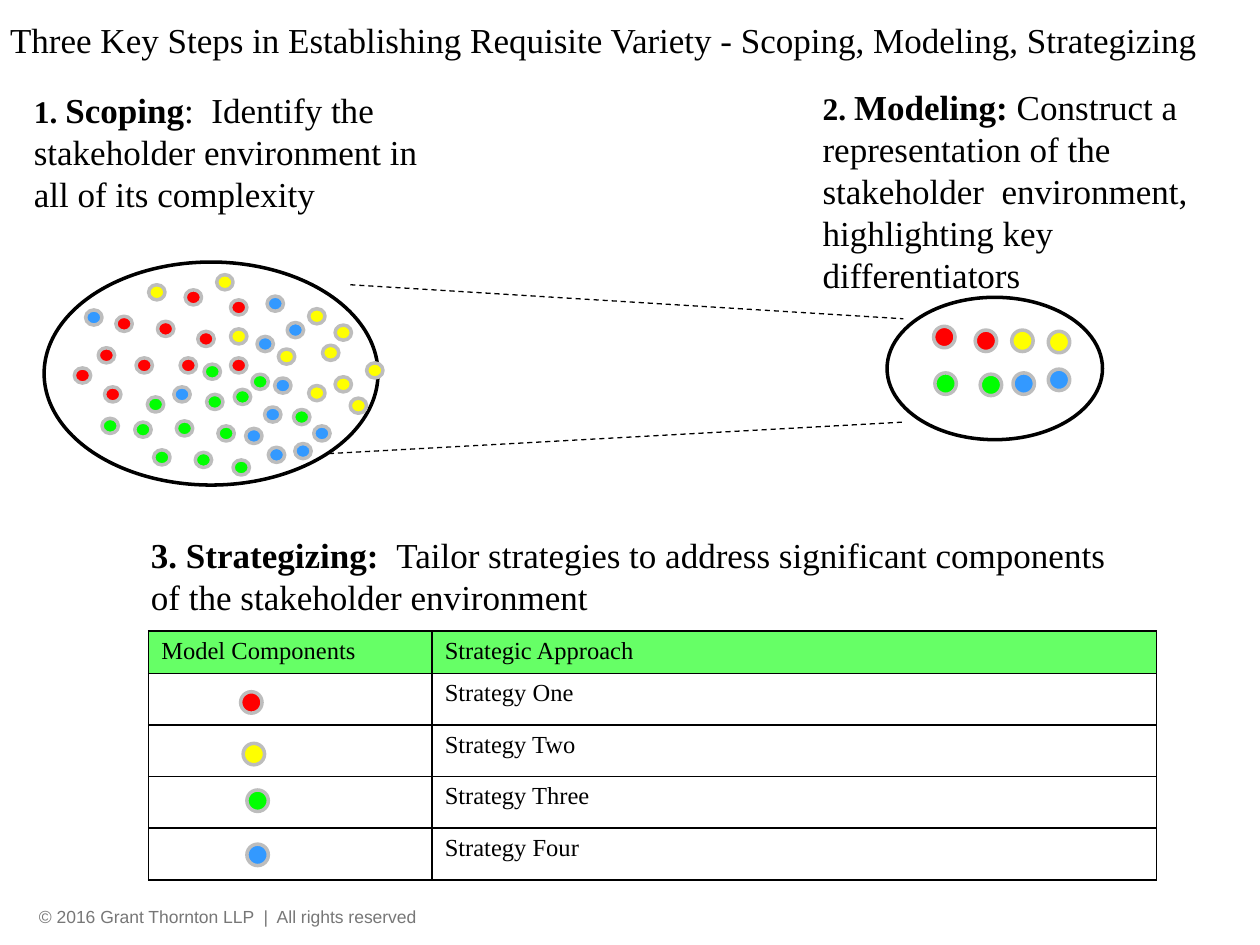
import pptx
import pptx.util
import pptx.dml.color
import pptx.enum.dml
import pptx.enum.shapes
import pptx.enum.text
import pptx.oxml
import pptx.oxml.ns
from pptx.util import Inches

COLORS = {
    "black": "000000", "white": "FFFFFF", "gray": "777777", "ring": "BDBDBD",
    "header": "66FF66", "red": "FF0000", "yellow": "FFFF00",
    "green": "00FF00", "blue": "3399FF",
}
SERIF = "Times New Roman"

# Left and top of each dot, by stakeholder group
SCOPE_DOTS = {
    "red": [(1.83, 2.38), (1.57, 2.63), (0.83, 3.07), (1.47, 2.3), (0.78, 2.76),
            (1.43, 2.84), (1.08, 2.84), (0.92, 2.51), (1.25, 2.55), (1.83, 2.84),
            (0.59, 2.92)],
    "green": [(1.85, 3.65), (1.62, 2.89), (1.07, 3.35), (1.73, 3.38), (1.55, 3.59),
              (1.17, 3.15), (1.64, 3.13), (1.22, 3.57), (0.81, 3.32), (1.4, 3.34),
              (1.86, 3.09), (2, 2.97), (2.33, 3.25)],
    "blue": [(2.28, 2.56), (1.95, 3.4), (2.49, 3.38), (1.38, 3.07), (2.18, 3),
             (0.68, 2.46), (2.34, 3.52), (2.04, 2.67), (2.13, 3.55), (2.1, 3.23),
             (2.12, 2.35)],
    "yellow": [(1.72, 2.18), (1.83, 2.61), (1.18, 2.26), (2.78, 3.16), (2.91, 2.88),
               (2.66, 2.58), (2.45, 3.06), (2.56, 2.74), (2.21, 2.77), (2.45, 2.45),
               (2.66, 2.99)],
}
MODEL_DOTS = {
    "red": [(7.41, 2.59), (7.74, 2.62)],
    "green": [(7.78, 2.97), (7.42, 2.96)],
    "blue": [(8.32, 2.93), (8.04, 2.96)],
    "yellow": [(8.03, 2.62), (8.32, 2.63)],
}
TABLE_DOTS = {
    "red": [(1.91, 5.49)], "yellow": [(1.93, 5.9)],
    "green": [(1.96, 6.27)], "blue": [(1.96, 6.7)],
}


def rgb(name):
    return pptx.dml.color.RGBColor.from_string(COLORS[name])


class Page:
    def __init__(self, deck):
        self.slide = deck.slides.add_slide(deck.slide_layouts[5])
        self.shapes = self.slide.shapes

    def span(self, para, text, size=20, bold=False, font=SERIF, color="black"):
        span = para.add_run()
        span.text = text
        span.font.name = font
        span.font.size = pptx.util.Pt(size)
        span.font.bold = bold
        span.font.color.rgb = rgb(color)

    def flush(self, frame):
        frame.margin_left = frame.margin_right = 0
        frame.margin_top = frame.margin_bottom = 0

    def title(self, text, left, top, width, height):
        box = self.shapes.title
        box.left, box.top = Inches(left), Inches(top)
        box.width, box.height = Inches(width), Inches(height)
        frame = box.text_frame
        self.flush(frame)
        frame.auto_size = pptx.enum.text.MSO_AUTO_SIZE.NONE
        frame.vertical_anchor = pptx.enum.text.MSO_ANCHOR.TOP
        frame.paragraphs[0].alignment = pptx.enum.text.PP_ALIGN.LEFT
        self.span(frame.paragraphs[0], text)

    def text(self, left, top, width, height):
        box = self.shapes.add_textbox(
            Inches(left), Inches(top), Inches(width), Inches(height))
        box.text_frame.word_wrap = True
        return box.text_frame

    def step(self, number, name, body, place, number_size=18):
        frame = self.text(*place)
        para = frame.paragraphs[0]
        self.span(para, number, number_size, bold=True)
        self.span(para, name, bold=True)
        self.span(para, body)
        return frame

    def ellipse(self, left, top, width, height, fill="white", line="black"):
        shape = self.shapes.add_shape(
            pptx.enum.shapes.MSO_SHAPE.OVAL,
            Inches(left), Inches(top), Inches(width), Inches(height))
        shape.shadow.inherit = False
        shape.fill.solid()
        shape.fill.fore_color.rgb = rgb(fill)
        shape.line.color.rgb = rgb(line)
        shape.line.width = pptx.util.Pt(2)

    def dots(self, groups, width, height):
        for color, places in groups.items():
            for left, top in places:
                self.ellipse(left, top, width, height, color, "ring")

    def dashed_line(self, start, end):
        line = self.shapes.add_connector(
            pptx.enum.shapes.MSO_CONNECTOR.STRAIGHT,
            *(Inches(value) for value in start + end))
        line.line.color.rgb = rgb("black")
        line.line.width = pptx.util.Pt(0.75)
        line.line.dash_style = pptx.enum.dml.MSO_LINE.DASH
        properties = line._element.spPr
        properties.append(pptx.oxml.parse_xml(
            f'<a:effectLst {pptx.oxml.ns.nsdecls("a")}/>'))

    def borders(self, cell):
        properties = cell._tc.get_or_add_tcPr()
        for side in "LRTB":
            properties.append(pptx.oxml.parse_xml(
                f'<a:ln{side} {pptx.oxml.ns.nsdecls("a")} w="12700"><a:solidFill>'
                f'<a:srgbClr val="{COLORS["black"]}"/></a:solidFill></a:ln{side}>'))

    def table(self, rows, left, top, widths, heights):
        table = self.shapes.add_table(
            len(rows), len(widths), Inches(left), Inches(top),
            Inches(sum(widths)), Inches(sum(heights))).table
        for column, width in zip(table.columns, widths):
            column.width = Inches(width)
        for index, (texts, height) in enumerate(zip(rows, heights)):
            table.rows[index].height = Inches(height)
            for cell, text in zip(table.rows[index].cells, texts):
                self.borders(cell)
                cell.fill.solid()
                cell.fill.fore_color.rgb = rgb("white" if index else "header")
                if text:
                    self.span(cell.text_frame.paragraphs[0], text, 14)


def main():
    deck = pptx.Presentation()
    deck.slide_width, deck.slide_height = Inches(10), Inches(7.5)
    page = Page(deck)

    # Title and footer
    page.title("Three Key Steps in Establishing Requisite Variety - "
               "Scoping, Modeling, Strategizing", 0.08, 0.15, 9.92, 0.69)
    footer = page.text(0.31, 7.19, 3.03, 0.17)
    footer.word_wrap = False
    page.flush(footer)
    page.span(footer.paragraphs[0], "© 2016 Grant Thornton LLP  |  All rights reserved",
              10, font="Arial", color="gray")

    # Stakeholder environment and its model
    page.ellipse(0.35, 2.08, 2.65, 1.77)
    page.dots(SCOPE_DOTS, 0.13, 0.12)
    page.ellipse(7.04, 2.36, 1.71, 1.13)
    page.dots(MODEL_DOTS, 0.17, 0.17)

    # Steps one and two
    page.step("1. ", "Scoping", ":  Identify the stakeholder environment in "
              "all of its complexity", (0.17, 0.65, 3.32, 1.11))
    page.step("2. ", "Modeling: ", "Construct a representation of the stakeholder  "
              "environment, highlighting key differentiators", (6.43, 0.63, 3.55, 1.78))
    page.dashed_line((2.61, 3.6), (7.17, 3.35))
    page.dashed_line((2.78, 2.26), (7.17, 2.53))

    # Step three with its strategy table
    rows = [("Model Components", "Strategic Approach")]
    rows += [("", f"Strategy {number}") for number in ("One", "Two", "Three", "Four")]
    page.table(rows, 1.18, 5.01, [2.25, 5.75], [0.33] + [0.41] * 4)
    strategy = page.step("3. ", "Strategizing:  ", "Tailor strategies to address "
                         "significant components of the stakeholder environment",
                         (1.1, 4.35, 8.04, 0.44), number_size=20)
    strategy.vertical_anchor = pptx.enum.text.MSO_ANCHOR.MIDDLE
    page.dots(TABLE_DOTS, 0.17, 0.17)

    deck.save("out.pptx")


if __name__ == "__main__":
    main()
